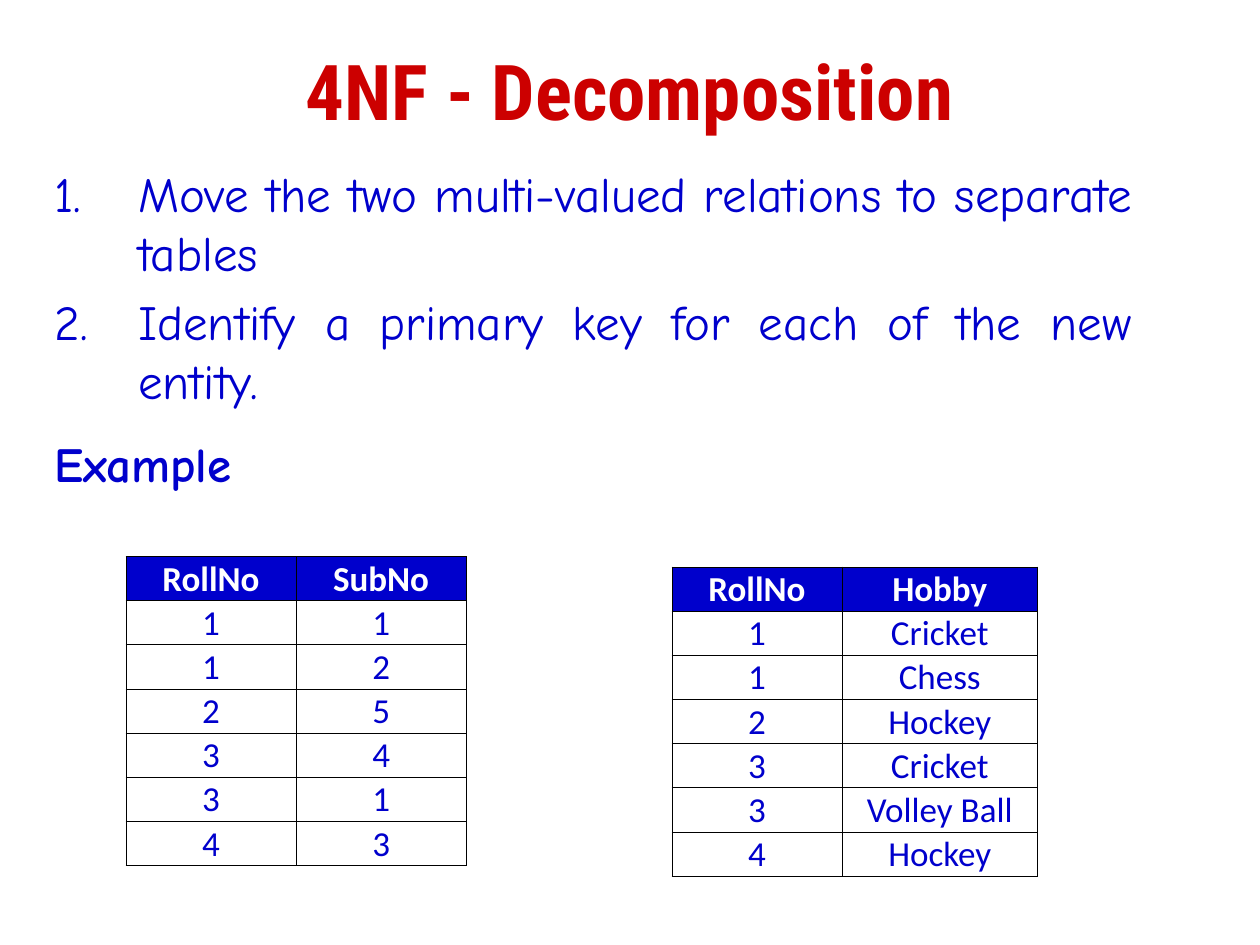
from dataclasses import dataclass

from lxml import etree
from pptx import Presentation
from pptx.dml.color import RGBColor
from pptx.enum.text import MSO_ANCHOR, PP_ALIGN
from pptx.oxml.ns import qn
from pptx.util import Pt

LEFT, CENTER, JUSTIFY = PP_ALIGN.LEFT, PP_ALIGN.CENTER, PP_ALIGN.JUSTIFY
MIDDLE, BOTTOM = MSO_ANCHOR.MIDDLE, MSO_ANCHOR.BOTTOM


@dataclass(frozen=True)
class Theme:
    blue: str = "0000CC"
    red: str = "CC0000"
    white: str = "FFFFFF"
    border: str = "000000"
    border_width: float = 0.5
    title_font: str = "Roboto Condensed"
    body_font: str = "Comic Neue"
    table_font: str = "Calibri"
    title_size: int = 44
    body_size: int = 28
    table_size: int = 20


THEME = Theme()
STEPS = [
    "Move the two multi-valued relations to separate tables",
    "Identify a primary key for each of the new entity.",
]
SUBJECTS = [("RollNo", "SubNo"), ("1", "1"), ("1", "2"), ("2", "5"),
            ("3", "4"), ("3", "1"), ("4", "3")]
HOBBIES = [("RollNo", "Hobby"), ("1", "Cricket"), ("1", "Chess"), ("2", "Hockey"),
           ("3", "Cricket"), ("3", "Volley Ball"), ("4", "Hockey")]


def write(p, text, *, font, size, color, bold=False, align=LEFT, before=0):
    p.alignment = align
    p.space_before = Pt(before)
    r = p.add_run()
    r.text = text
    r.font.name = font
    r.font.size = Pt(size)
    r.font.bold = bold
    r.font.color.rgb = RGBColor.from_string(color)


def add_text_frame(slide, box):
    tf = slide.shapes.add_textbox(*map(Pt, box)).text_frame
    tf.word_wrap = True
    return tf


def number(p, indent):
    """Give the paragraph an automatic number and a hanging indent."""
    pPr = p._p.get_or_add_pPr()
    pPr.set("marL", str(Pt(indent)))
    pPr.set("indent", str(-Pt(indent)))
    etree.SubElement(pPr, qn("a:buFont"), typeface="+mj-lt")
    etree.SubElement(pPr, qn("a:buAutoNum"), type="arabicPeriod")


def add_title(slide, box, text):
    tf = add_text_frame(slide, box)
    tf.vertical_anchor = MIDDLE
    write(tf.paragraphs[0], text, font=THEME.title_font, size=THEME.title_size,
          color=THEME.red, bold=True, align=CENTER)


def add_steps(slide, box, steps, heading):
    """Place the numbered steps, followed by the heading of the tables."""
    tf = add_text_frame(slide, box)
    style = dict(font=THEME.body_font, size=THEME.body_size, color=THEME.blue)
    for i, step in enumerate(steps):
        p = tf.add_paragraph() if i else tf.paragraphs[0]
        write(p, step, align=JUSTIFY, before=0.2 * THEME.body_size, **style)
        number(p, 48)
    write(tf.add_paragraph(), heading, bold=True, before=0.5 * THEME.body_size, **style)


def add_borders(cell):
    tcPr = cell._tc.get_or_add_tcPr()
    for i, side in enumerate(("a:lnL", "a:lnR", "a:lnT", "a:lnB")):
        ln = etree.Element(qn(side), w=str(Pt(THEME.border_width)))
        fill = etree.SubElement(ln, qn("a:solidFill"))
        etree.SubElement(fill, qn("a:srgbClr"), val=THEME.border)
        tcPr.insert(i, ln)


def format_cell(cell, text, is_header):
    cell.margin_left = cell.margin_right = cell.margin_top = Pt(0.7)
    cell.margin_bottom = Pt(0)
    cell.vertical_anchor = BOTTOM
    if is_header:
        cell.fill.solid()
        cell.fill.fore_color.rgb = RGBColor.from_string(THEME.blue)
    else:
        cell.fill.background()
    add_borders(cell)
    write(cell.text_frame.paragraphs[0], text, font=THEME.table_font,
          size=THEME.table_size, color=THEME.white if is_header else THEME.blue,
          bold=is_header, align=CENTER)


def add_relation(slide, left, top, widths, rows, row_height=25.25):
    """Place a relation as a table with its header in the first row."""
    table = slide.shapes.add_table(
        len(rows), len(widths), Pt(left), Pt(top),
        Pt(sum(widths)), Pt(row_height * len(rows))).table
    table.horz_banding = False
    for column, width in zip(table.columns, widths):
        column.width = Pt(width)
    for i, values in enumerate(rows):
        table.rows[i].height = Pt(row_height)
        for j, value in enumerate(values):
            format_cell(table.cell(i, j), value, i == 0)


def main():
    prs = Presentation()
    prs.slide_width, prs.slide_height = Pt(720), Pt(540)
    slide = prs.slides.add_slide(prs.slide_layouts[6])
    add_steps(slide, (24, 90, 630, 408), STEPS, "Example")
    add_title(slide, (54, 6, 612, 90), "4NF - Decomposition")
    add_relation(slide, 72, 318, (97.2, 97.2), SUBJECTS)
    add_relation(slide, 384, 324, (97.2, 111.6), HOBBIES)
    prs.save("out.pptx")


if __name__ == "__main__":
    main()
